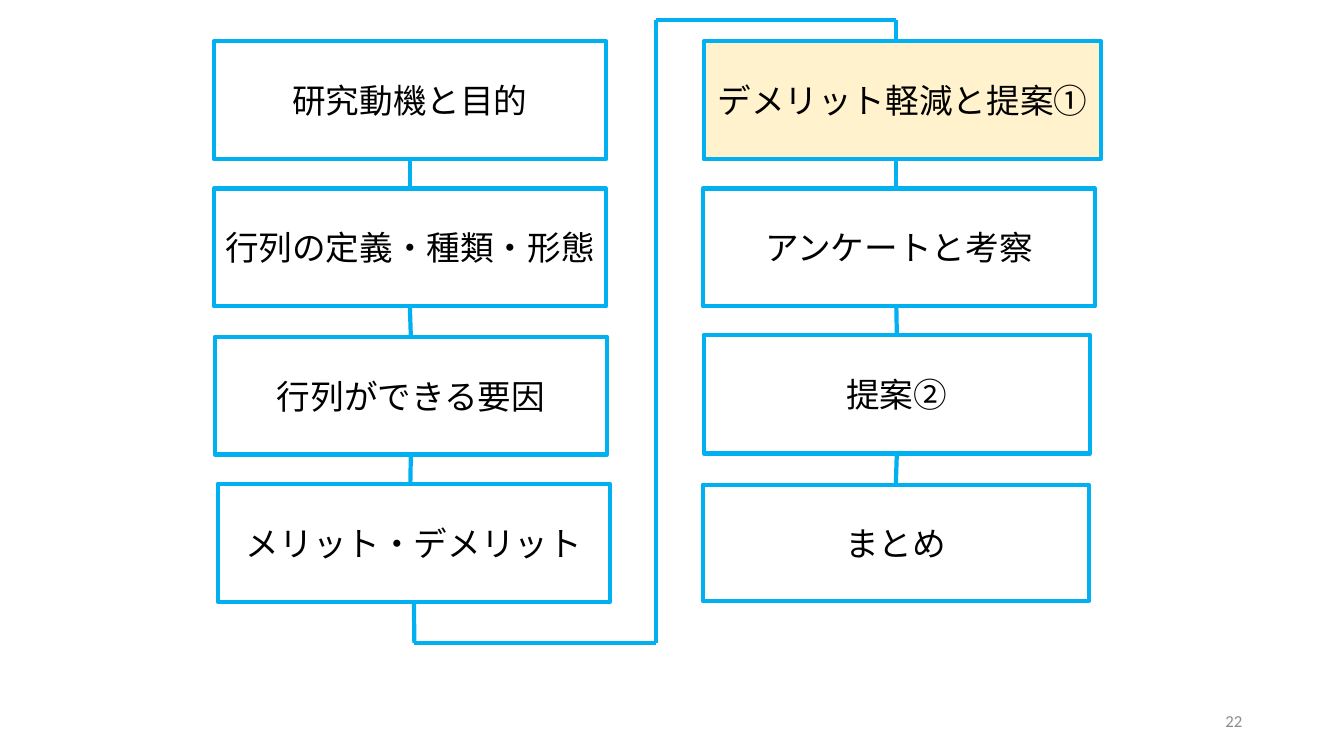
from pptx import Presentation
from pptx.dml.color import RGBColor
from pptx.enum.shapes import MSO_CONNECTOR, MSO_SHAPE
from pptx.enum.text import MSO_ANCHOR, PP_ALIGN
from pptx.oxml import parse_xml
from pptx.oxml.ns import nsdecls, qn
from pptx.util import Inches, Pt

COLORS = {"line": "00B0F0", "plain": "FFFFFF", "current": "FFF2CC",
          "text": "000000", "number": "8C8C8C"}
FONT = "Calibri"
PAGE = "22"
CURRENT = "デメリット軽減と提案①"

# Steps of the talk: text, left, top, width, height
LEFT_STEPS = [
    ("研究動機と目的", 2.12, 0.41, 3.89, 1.17),
    ("行列の定義・種類・形態", 2.12, 1.87, 3.89, 1.17),
    ("行列ができる要因", 2.13, 3.34, 3.89, 1.17),
    ("メリット・デメリット", 2.16, 4.8, 3.89, 1.17),
]
RIGHT_STEPS = [
    (CURRENT, 6.98, 0.41, 3.94, 1.17),
    ("アンケートと考察", 6.97, 1.87, 3.89, 1.17),
    ("提案②", 6.98, 3.32, 3.83, 1.18),
    ("まとめ", 6.97, 4.81, 3.83, 1.15),
]
LEFT_X, RIGHT_X = 4.07, 8.89
# Route from the last left step up to the first right step
ROUTE = [(4.1, 5.97), (4.11, 6.38), (6.51, 6.38), (6.51, 0.2),
         (RIGHT_X, 0.2), (RIGHT_X, 0.41)]
TOP, BOTTOM = 0, 2


def rgb(name):
    return RGBColor.from_string(COLORS[name])


def add_text(shape, text, size, color, align):
    tf = shape.text_frame
    tf.word_wrap = True
    tf.vertical_anchor = MSO_ANCHOR.MIDDLE
    p = tf.paragraphs[0]
    p.alignment = align
    r = p.add_run()
    r.text = text
    r.font.name, r.font.size = FONT, Pt(size)
    r.font.color.rgb = rgb(color)
    return r


def add_step(s, text, *box):
    sp = s.shapes.add_shape(MSO_SHAPE.RECTANGLE, *map(Inches, box))
    sp.shadow.inherit = False
    sp.fill.solid()
    sp.fill.fore_color.rgb = rgb("current" if text == CURRENT else "plain")
    sp.line.color.rgb = rgb("line")
    sp.line.width = Pt(3)
    r = add_text(sp, text, 24, "text", PP_ALIGN.CENTER)
    # Thin outline around the letters
    r.font._element.insert(0, parse_xml(
        f'<a:ln {nsdecls("a")} w="9525"><a:solidFill>'
        f'<a:srgbClr val="{COLORS["text"]}"/></a:solidFill></a:ln>'))
    return sp


def add_line(s, start, end, width=3):
    c = s.shapes.add_connector(MSO_CONNECTOR.STRAIGHT,
                               *map(Inches, (*start, *end)))
    c.line.color.rgb = rgb("line")
    c.line.width = Pt(width)
    c._element.spPr.append(c._element.makeelement(qn("a:effectLst"), {}))
    return c


prs = Presentation()
prs.slide_width, prs.slide_height = Inches(13.33), Inches(7.5)
s = prs.slides.add_slide(prs.slide_layouts[6])

# Boxes, and the short links between neighbours in a column
columns = []
for steps, x in ((LEFT_STEPS, LEFT_X), (RIGHT_STEPS, RIGHT_X)):
    boxes = [add_step(s, *step) for step in steps]
    columns.append(boxes)
    for i, (upper, lower) in enumerate(zip(boxes, boxes[1:])):
        y1 = steps[i][2] + steps[i][4]
        c = add_line(s, (x, y1), (x, steps[i + 1][2]))
        # Join only where the link meets the middle of a side
        for box, side, join in ((upper, BOTTOM, c.begin_connect),
                                (lower, TOP, c.end_connect)):
            if abs(box.left + box.width / 2 - Inches(x)) < Inches(0.02):
                join(box, side)

# Route between the columns
for start, end in zip(ROUTE, ROUTE[1:]):
    edge = start == ROUTE[0] or end == ROUTE[-1]
    c = add_line(s, start, end, 3 if edge else 2.75)
    if start == ROUTE[0]:
        c.begin_connect(columns[0][-1], BOTTOM)

# Page number
tb = s.shapes.add_textbox(Inches(9.42), Inches(6.95), Inches(3), Inches(0.4))
add_text(tb, PAGE, 12, "number", PP_ALIGN.RIGHT)

prs.save("out.pptx")
